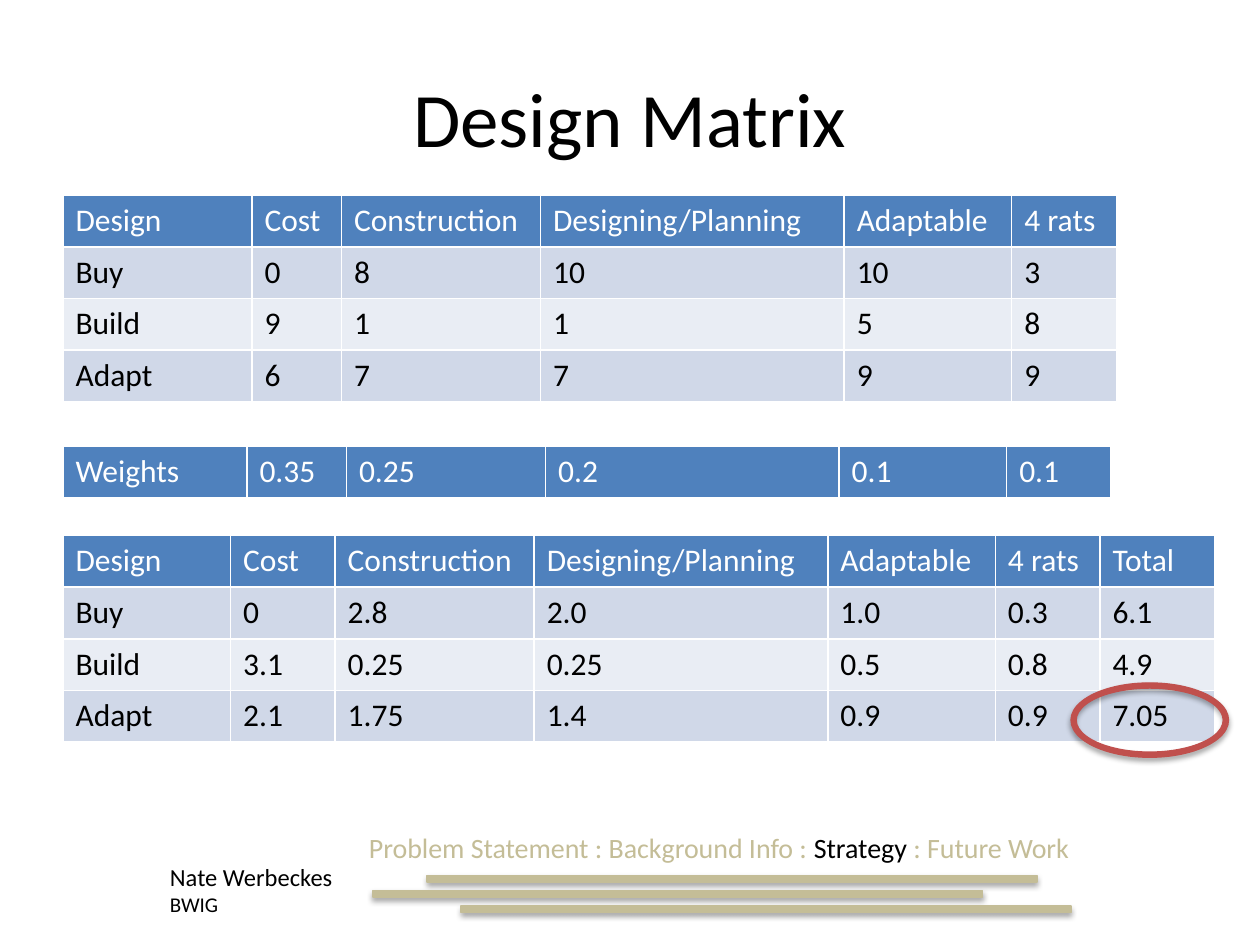
from lxml import etree
from pptx import Presentation
from pptx.dml.color import RGBColor
from pptx.enum.shapes import MSO_SHAPE as Shape
from pptx.enum.text import MSO_ANCHOR as Anchor, PP_ALIGN as Align
from pptx.oxml import parse_xml
from pptx.oxml.ns import nsdecls
from pptx.util import Inches, Pt

FONT = "Calibri"
BLACK, WHITE, TAN, RED = "000000", "FFFFFF", "C4BD97", "C0504D"
HEADER, BANDS = "4F81BD", ("D0D8E8", "E9EDF4")
ROW_HEIGHT = 0.41

SCORES = [
    ["Design", "Cost", "Construction", "Designing/Planning", "Adaptable", "4 rats"],
    ["Buy", "0", "8", "10", "10", "3"],
    ["Build", "9", "1", "1", "5", "8"],
    ["Adapt", "6", "7", "7", "9", "9"],
]
WEIGHTS = [["Weights", "0.35", "0.25", "0.2", "0.1", "0.1"]]
WEIGHTED = [
    SCORES[0] + ["Total"],
    ["Buy", "0", "2.8", "2.0", "1.0", "0.3", "6.1"],
    ["Build", "3.1", "0.25", "0.25", "0.5", "0.8", "4.9"],
    ["Adapt", "2.1", "1.75", "1.4", "0.9", "0.9", "7.05"],
]


def color(value):
    return RGBColor.from_string(value)


def set_font(font, size, value):
    font.name, font.size, font.bold = FONT, Pt(size), False
    font.color.rgb = color(value)


def add_solid(shapes, kind, box, value):
    """Add a filled shape with a soft shadow below it."""
    shape = shapes.add_shape(kind, *map(Inches, box))
    shape.fill.solid()
    shape.fill.fore_color.rgb = color(value)
    shape.line.color.rgb = color(value)
    shape.line.width = Pt(0.75)
    shape.shadow.inherit = False
    effects = shape.element.spPr.find(
        "{http://schemas.openxmlformats.org/drawingml/2006/main}effectLst")
    effects.append(parse_xml(
        f'<a:outerShdw {nsdecls("a")} blurRad="{Pt(3.1)}" dist="{Pt(1.8)}" '
        'dir="5400000" rotWithShape="0"><a:srgbClr val="000000">'
        '<a:alpha val="35000"/></a:srgbClr></a:outerShdw>'))
    return shape


def add_text_box(page, box):
    frame = page.shapes.add_textbox(*map(Inches, box)).text_frame
    frame.word_wrap = True
    return frame


def add_title(page, box, text):
    title = page.shapes.title
    title.left, title.top, title.width, title.height = map(Inches, box)
    title.text_frame.vertical_anchor = Anchor.MIDDLE
    para = title.text_frame.paragraphs[0]
    para.text, para.alignment = text, Align.CENTER
    set_font(para.font, 44, BLACK)


def add_matrix(page, left, top, widths, rows):
    """Add a table with a header row and banded body; the style draws white borders."""
    table = page.shapes.add_table(
        len(rows), len(widths), Inches(left), Inches(top),
        Inches(sum(widths)), Inches(ROW_HEIGHT * len(rows))).table
    for column, width in zip(table.columns, widths):
        column.width = Inches(width)
    for r, values in enumerate(rows):
        fill, ink = (BANDS[(r - 1) % 2], BLACK) if r else (HEADER, WHITE)
        for c, value in enumerate(values):
            cell = table.cell(r, c)
            cell.fill.solid()
            cell.fill.fore_color.rgb = color(fill)
            cell.text = value
            set_font(cell.text_frame.paragraphs[0].font, 18, ink)


def add_agenda(page, box):
    para = add_text_box(page, box).paragraphs[0]
    for text, ink in (("Problem Statement : Background Info : ", TAN),
                      ("Strategy ", BLACK), (": Future Work", TAN)):
        span = para.add_run()
        span.text = text
        set_font(span.font, 16, ink)


def add_author(page, box):
    frame = add_text_box(page, box)
    frame.text = "Nate Werbeckes\nBWIG"
    for para, size in zip(frame.paragraphs, (14, 12)):
        set_font(para.font, size, BLACK)


def add_footer_bars(page, top):
    group = page.shapes.add_group_shape()
    for i, left in enumerate((3.39, 2.96, 3.66)):
        add_solid(group.shapes, Shape.RECTANGLE, (left, top + 0.12 * i, 4.84, 0.05), TAN)


def main():
    deck = Presentation()
    deck.slide_width, deck.slide_height = Inches(10), Inches(7.5)
    page = deck.slides.add_slide(deck.slide_layouts[5])

    # Footer bars and title
    add_footer_bars(page, 6.95)
    add_title(page, (0.5, 0.3, 9, 1.25), "Design Matrix")

    # Raw scores, weights and weighted scores
    add_matrix(page, 0.5, 1.55, (1.5, 0.71, 1.58, 2.41, 1.33, 0.83), SCORES)
    add_matrix(page, 0.5, 3.54, (1.46, 0.79, 1.58, 2.33, 1.33, 0.83), WEIGHTS)
    add_matrix(page, 0.5, 4.25, (1.33, 0.83, 1.58, 2.33, 1.33, 0.83, 0.91), WEIGHTED)

    # Footer text
    add_agenda(page, (2.83, 6.54, 5.83, 0.37))
    add_author(page, (1.25, 6.79, 1.75, 0.54))

    # Ring around the winning total
    ring = add_solid(page.shapes, Shape.DONUT, (8.5, 5.42, 1.25, 0.59), RED)
    ring.adjustments[0] = 0.07

    deck.save("out.pptx")


if __name__ == "__main__":
    main()
